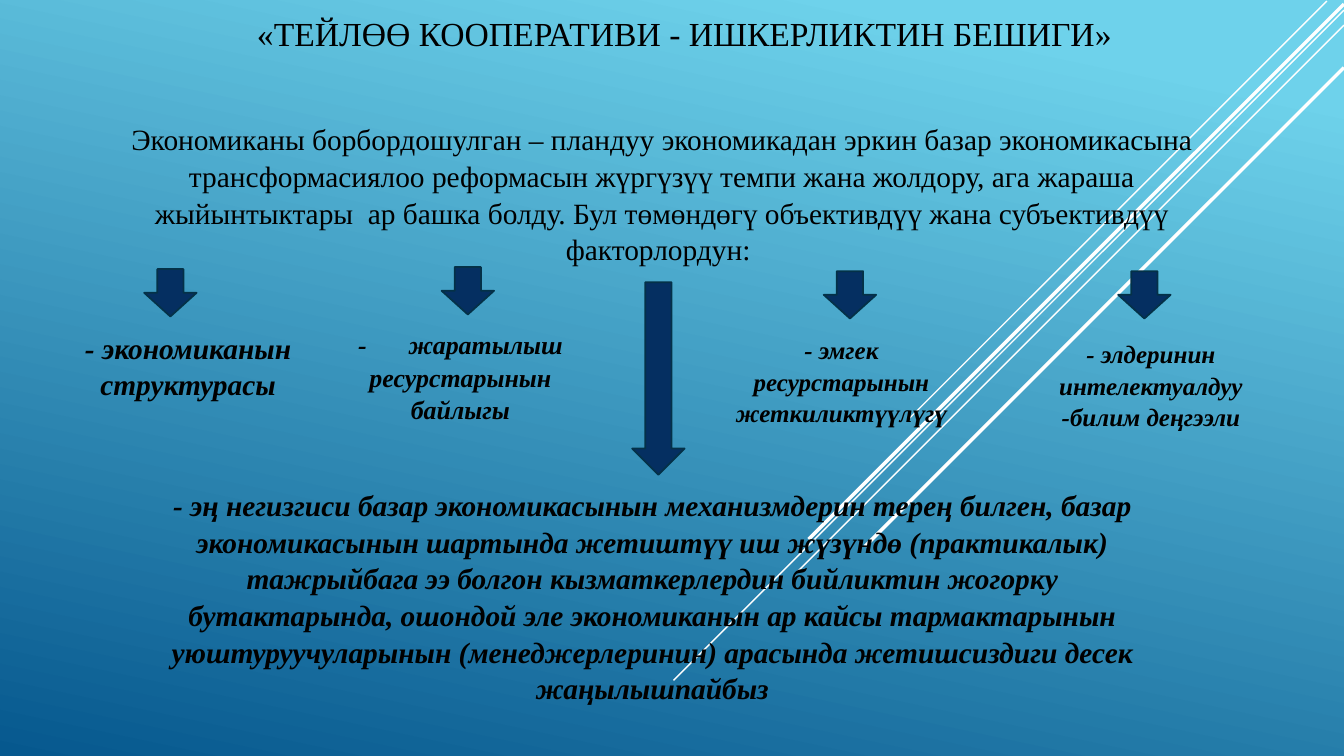
from dataclasses import dataclass
from lxml import etree
from pptx import Presentation
from pptx.dml.color import RGBColor
from pptx.enum.shapes import MSO_CONNECTOR, MSO_SHAPE
from pptx.enum.text import MSO_ANCHOR, PP_ALIGN
from pptx.oxml.ns import qn
from pptx.util import Emu, Pt

PX = 9144  # 100 px to the inch


@dataclass(frozen=True)
class Theme:
    font: str = "Times New Roman"
    text: str = "000000"
    sky: str = "6ED2EB"
    sea: str = "06588E"
    ray: str = "FFFFFF"
    arrow: str = "052F61"
    arrow_edge: str = "043148"
    title_size: float = 24
    body_size: float = 21
    resource_size: float = 18.5
    factor_size: float = 17.9
    thin: float = 1
    thick: float = 2.5
    edge: float = 1.25
    line_spacing: float = 1.04


THEME = Theme()

TITLE = "«ТЕЙЛӨӨ КООПЕРАТИВИ - ИШКЕРЛИКТИН БЕШИГИ»"
INTRO = (
    "Экономиканы борбордошулган – пландуу экономикадан эркин базар экономикасына "
    "трансформасиялоо реформасын жүргүзүү темпи жана жолдору, ага жараша "
    "жыйынтыктары  ар башка болду. Бул төмөндөгү объективдүү жана субъективдүү "
    "факторлордун: "
)
CONCLUSION = (
    "- эң негизгиси базар экономикасынын механизмдерин терең билген, базар "
    "экономикасынын шартында жетиштүү иш жүзүндө (практикалык) тажрыйбага ээ "
    "болгон кызматкерлердин бийликтин жогорку бутактарында, ошондой эле "
    "экономиканын ар кайсы тармактарынын уюштуруучуларынын (менеджерлеринин) "
    "арасында жетишсиздиги десек жаңылышпайбыз"
)
# text, size, text box, arrow left and top
FACTORS = [
    ("- экономиканын структурасы", THEME.body_size, (54, 321, 265, 82), (143, 267)),
    ("-\tжаратылыш ресурстарынын байлыгы", THEME.resource_size, (324, 320, 265, 102), (438, 265)),
    ("- эмгек ресурстарынын жеткиликтүүлүгү", THEME.factor_size, (702, 326, 265, 82), (817, 269)),
    ("- элдеринин интелектуалдуу -билим деңгээли", THEME.factor_size, (1009, 330, 265, 82), (1109, 269)),
]
# start x and y, length along the diagonal's x axis, width
RAYS = [
    (1316, 1, 416, THEME.thin),
    (1333, 10, 665, THEME.thin),
    (1333, 25, 542, THEME.thin),
    (1333, 4, 531, THEME.thick),
    (1333, 67, 475, THEME.thick),
]
ARROW_WIDTH, ARROW_HEIGHT = 52, 47


def px(*lengths):
    return [Emu(length * PX) for length in lengths]


def color(code):
    return RGBColor.from_string(code)


def paint_background(slide):
    fill = slide.background.fill
    fill.gradient()
    fill.gradient_angle = 258
    for stop, position, code in zip(fill.gradient_stops, (0.1, 1), (THEME.sky, THEME.sea)):
        stop.position = position
        stop.color.rgb = color(code)


def add_rays(slide):
    """Draw the 45-degree rays falling from the top right corner."""
    for x, y, length, width in RAYS:
        ray = slide.shapes.add_connector(
            MSO_CONNECTOR.STRAIGHT, *px(x, y, x - length, y + length))
        ray.line.color.rgb = color(THEME.ray)
        ray.line.width = Pt(width)
        etree.SubElement(ray._element.spPr, qn("a:effectLst"))


def add_text(slide, box, text, size, emphasis=False):
    frame = slide.shapes.add_textbox(*px(*box)).text_frame
    frame.word_wrap = True
    para = frame.paragraphs[0]
    para.text = text
    para.alignment = PP_ALIGN.CENTER
    para.line_spacing = THEME.line_spacing
    para.space_after = Pt(6)
    font = para.runs[0].font
    font.name, font.size = THEME.font, Pt(size)
    font.bold = font.italic = emphasis
    font.color.rgb = color(THEME.text)
    return frame


def add_title(slide, box):
    frame = add_text(slide, box, TITLE, THEME.title_size)
    frame.vertical_anchor = MSO_ANCHOR.BOTTOM
    para = frame.paragraphs[0]
    para.alignment = PP_ALIGN.LEFT
    para.line_spacing = 1.0
    para.space_after = Pt(0)


def add_arrow(slide, left, top, height=ARROW_HEIGHT):
    arrow = slide.shapes.add_shape(
        MSO_SHAPE.DOWN_ARROW, *px(left, top, ARROW_WIDTH, height))
    arrow.shadow.inherit = False
    arrow.fill.solid()
    arrow.fill.fore_color.rgb = color(THEME.arrow)
    arrow.line.color.rgb = color(THEME.arrow_edge)
    arrow.line.width = Pt(THEME.edge)


def add_factor(slide, text, size, box, arrow_at):
    frame = add_text(slide, box, text, size, emphasis=True)
    if "\t" in text:
        tabs = etree.SubElement(frame.paragraphs[0]._p.get_or_add_pPr(), qn("a:tabLst"))
        etree.SubElement(tabs, qn("a:tab"), pos=str(50 * PX), algn="l")
    add_arrow(slide, *arrow_at)


def build_slide(deck):
    slide = deck.slides.add_slide(deck.slide_layouts[6])
    paint_background(slide)
    add_rays(slide)
    add_title(slide, (245, 0, 889, 58))
    add_text(slide, (91, 114, 1131, 152), INTRO, THEME.body_size)
    for factor in FACTORS:
        add_factor(slide, *factor)
    add_text(slide, (147, 477, 1000, 212), CONCLUSION, THEME.body_size, emphasis=True)
    add_arrow(slide, 627, 280, height=191)


def main():
    deck = Presentation()
    deck.slide_width, deck.slide_height = px(1333, 750)
    build_slide(deck)
    deck.save("out.pptx")


if __name__ == "__main__":
    main()
